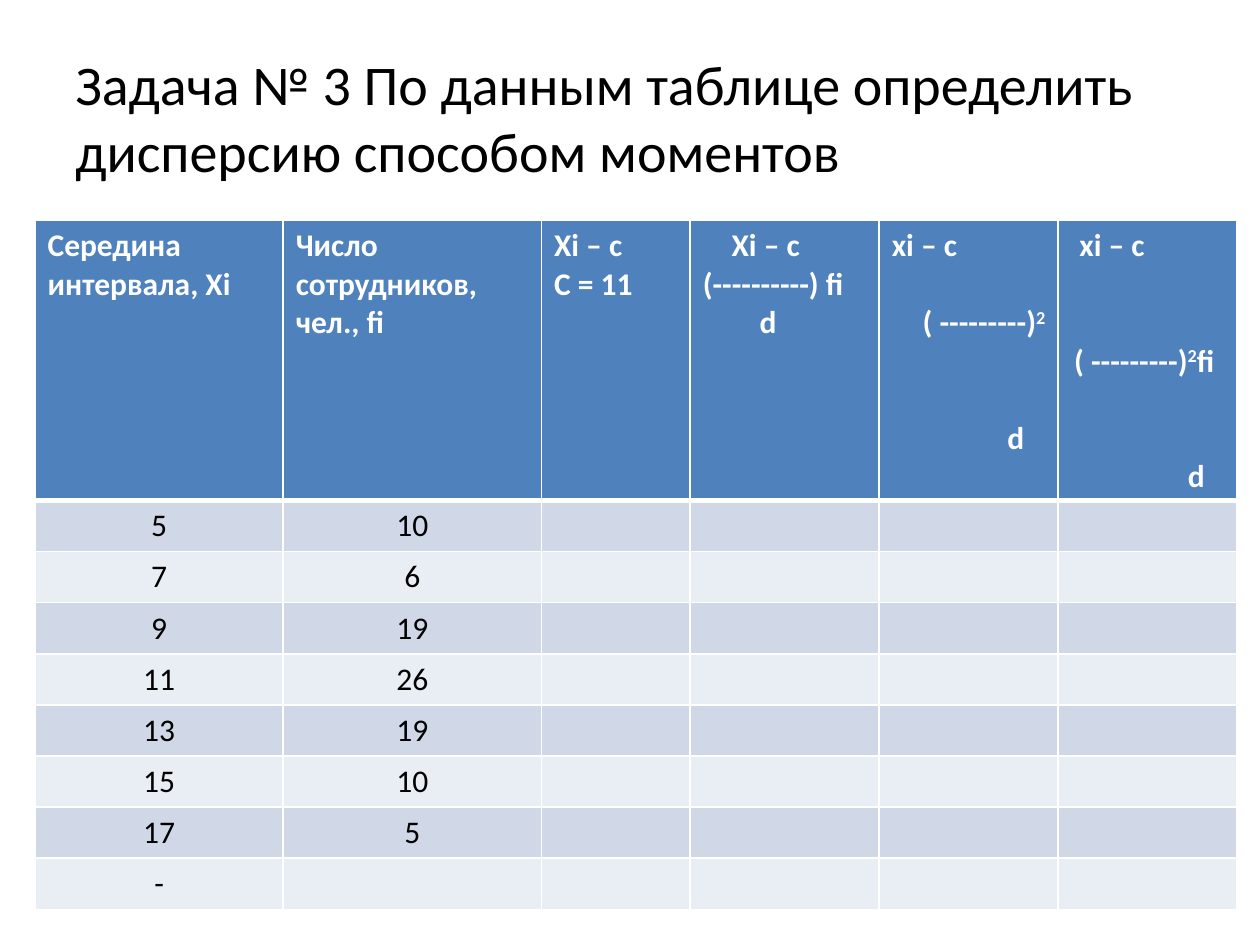
from dataclasses import dataclass

from lxml import etree
from pptx import Presentation
from pptx.dml.color import RGBColor
from pptx.enum import text as txt
from pptx.oxml import ns
from pptx.util import Pt

FONT = "Calibri"
WHITE, BLACK, HEADER_BLUE = "FFFFFF", "000000", "4F81BD"
BANDS = ("D0D8E8", "E9EDF4")
LEFT, CENTER, RIGHT = txt.PP_ALIGN.LEFT, txt.PP_ALIGN.CENTER, txt.PP_ALIGN.RIGHT
LINE = 22  # height of one line of 18 pt text


@dataclass(frozen=True)
class Line:
    """One paragraph; superscript and tail follow the main text."""
    body: str
    indent: float = 0
    before: float = 0
    align: txt.PP_ALIGN = LEFT
    superscript: str = ""
    tail: str = ""


@dataclass(frozen=True)
class Column:
    width: float
    heading: tuple[Line, ...]


COLUMNS = (
    Column(141.8, (Line("Середина интервала, Xi"),)),
    Column(147.6, (Line("Число сотрудников, чел., fi"),)),
    Column(85, (Line("Xi – c"), Line("C = 11"))),
    Column(108, (Line("Xi – c", 16.5), Line("(----------) fi"), Line("d", 32.5))),
    Column(102.2, (Line("xi – c"),
                   Line("( ---------)", before=LINE, align=RIGHT, superscript="2"),
                   Line("d", 66, 2 * LINE))),
    Column(102.2, (Line("xi – c", 5),
                   Line("( ---------)", 2, 2 * LINE, superscript="2", tail="fi"),
                   Line("d", 67, 2 * LINE))),
)
DATA = (("5", "10"), ("7", "6"), ("9", "19"), ("11", "26"),
        ("13", "19"), ("15", "10"), ("17", "5"), ("-", ""))
HEADER_HEIGHT, ROW_HEIGHT = 160, 29.2


def color(value: str) -> RGBColor:
    return RGBColor.from_string(value)


def write(frame, lines: tuple[Line, ...], size: float, ink: str, bold: bool = False) -> None:
    for index, line in enumerate(lines):
        paragraph = frame.paragraphs[0] if index == 0 else frame.add_paragraph()
        paragraph.alignment = line.align
        paragraph.space_before = Pt(line.before)
        if line.indent:
            paragraph._p.get_or_add_pPr().set("marL", str(Pt(line.indent)))
        paragraph.font.name, paragraph.font.size = FONT, Pt(size)
        paragraph.font.bold = bold
        paragraph.font.color.rgb = color(ink)
        for part in filter(None, (line.body, line.superscript, line.tail)):
            run = paragraph.add_run()
            run.text = part
            if part == line.superscript:
                run.font._element.set("baseline", "30000")


def paint(cell, fill: str, top: float = 1, bottom: float = 1) -> None:
    """Draw white borders, then the fill."""
    properties = cell._tc.get_or_add_tcPr()
    for side, width in (("L", 1), ("R", 1), ("T", top), ("B", bottom)):
        border = etree.SubElement(properties, ns.qn(f"a:ln{side}"), w=str(Pt(width)))
        solid = etree.SubElement(border, ns.qn("a:solidFill"))
        etree.SubElement(solid, ns.qn("a:srgbClr"), val=WHITE)
    cell.fill.solid()
    cell.fill.fore_color.rgb = color(fill)


def add_title(slide) -> None:
    title = slide.shapes.add_textbox(Pt(36), Pt(21.6), Pt(648), Pt(90)).text_frame
    title.word_wrap = True
    title.vertical_anchor = txt.MSO_ANCHOR.MIDDLE
    write(title, (Line("Задача № 3 По данным таблице определить дисперсию способом моментов"),),
          32, BLACK)


def add_variance_table(slide) -> None:
    width = sum(column.width for column in COLUMNS)
    height = HEADER_HEIGHT + ROW_HEIGHT * len(DATA)
    table = slide.shapes.add_table(len(DATA) + 1, len(COLUMNS),
                                   Pt(20), Pt(126), Pt(width), Pt(height)).table
    # Header
    table.rows[0].height = Pt(HEADER_HEIGHT)
    for index, column in enumerate(COLUMNS):
        table.columns[index].width = Pt(column.width)
        heading = table.cell(0, index)
        paint(heading, HEADER_BLUE, bottom=3)
        write(heading.text_frame, column.heading, 18, WHITE, bold=True)
    # Banded data rows, with the calculated columns left open
    for row, values in enumerate(DATA, start=1):
        table.rows[row].height = Pt(ROW_HEIGHT)
        for index in range(len(COLUMNS)):
            cell = table.cell(row, index)
            paint(cell, BANDS[(row - 1) % 2], top=3 if row == 1 else 1)
            value = values[index] if index < len(values) else ""
            write(cell.text_frame, (Line(value, align=CENTER),), 18, BLACK)


def main() -> None:
    deck = Presentation()
    deck.slide_width, deck.slide_height = Pt(720), Pt(540)
    slide = deck.slides.add_slide(deck.slide_layouts[6])
    add_title(slide)
    add_variance_table(slide)
    deck.save("out.pptx")


if __name__ == "__main__":
    main()
